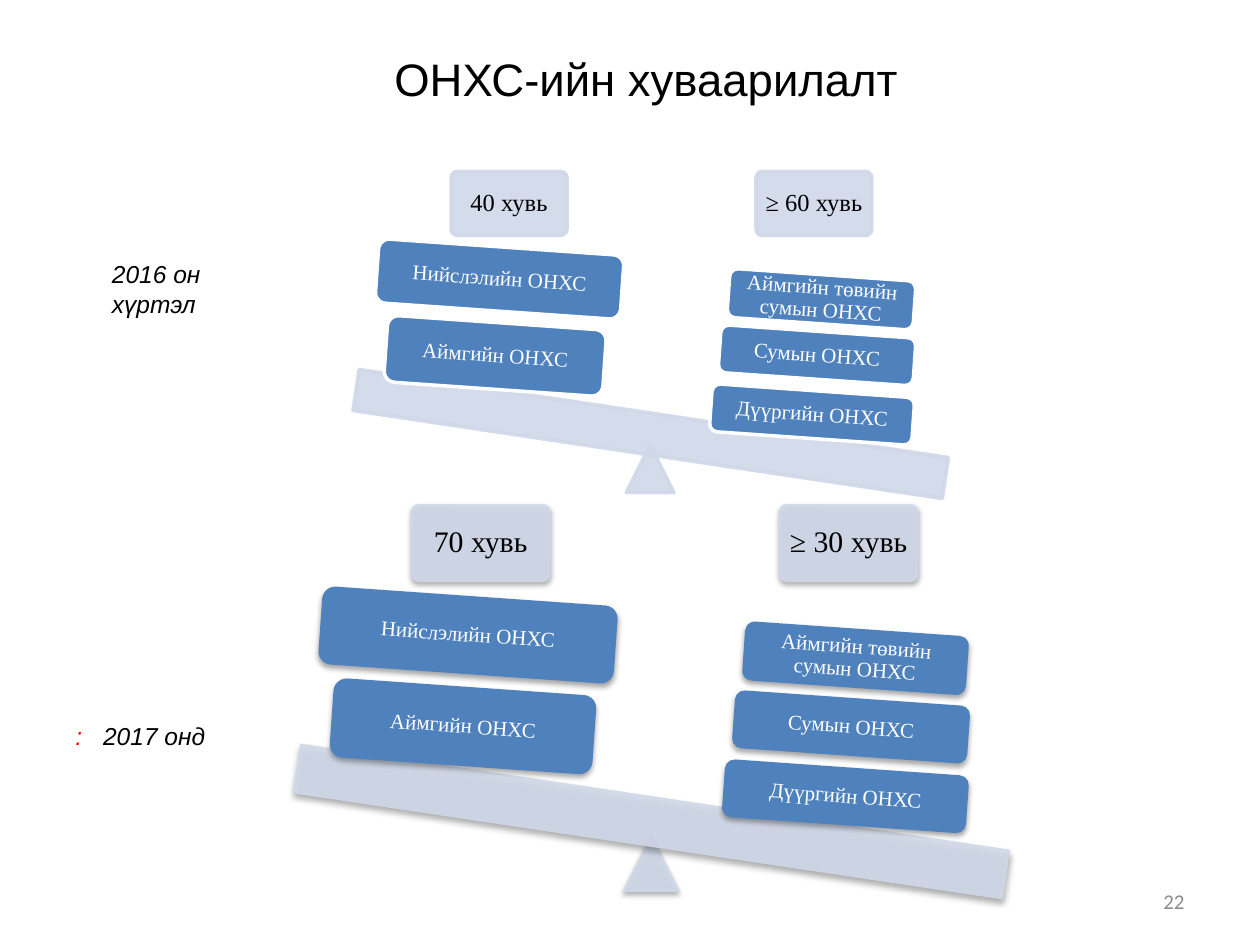
from dataclasses import dataclass

from lxml import etree
from pptx import Presentation
from pptx.dml.color import RGBColor
from pptx.enum.shapes import MSO_SHAPE as Shape
from pptx.enum.text import MSO_ANCHOR as Anchor, PP_ALIGN as Align
from pptx.oxml.ns import qn
from pptx.util import Inches, Pt


@dataclass(frozen=True)
class Theme:
    pale: str = "D0D8E8"
    blue: str = "4F81BD"
    white: str = "FFFFFF"
    black: str = "000000"
    red: str = "FF0000"
    gray: str = "8C8C8C"
    sans: str = "Arial"
    serif: str = "Times New Roman"
    number_font: str = "Calibri"
    title_size: int = 26
    large_card_size: int = 17
    card_size: int = 14
    label_size: int = 14
    small_size: int = 12
    pale_alpha: int = 90


class SlideBuilder:
    def __init__(self, slide, theme):
        self.slide = slide
        self.theme = theme

    def set_text(self, shape, text, size, font, color, align, anchor, italic=False):
        frame = shape.text_frame
        frame.text = text
        frame.word_wrap = True
        frame.vertical_anchor = anchor
        paragraph = frame.paragraphs[0]
        paragraph.alignment = align
        style = paragraph.runs[0].font
        style.size, style.name, style.italic = Pt(size), font, italic
        style.color.rgb = RGBColor.from_string(color)
        return paragraph

    def text_box(self, text, box, size, font, color, align=Align.LEFT,
                 anchor=Anchor.TOP, italic=False):
        shape = self.slide.shapes.add_textbox(*map(Inches, box))
        self.set_text(shape, text, size, font, color, align, anchor, italic)

    def label(self, text, box, color):
        self.text_box(text, box, self.theme.label_size, self.theme.sans, color,
                      italic=True)

    def fade(self, properties):
        color = properties.find(qn("a:solidFill"))[0]
        etree.SubElement(color, qn("a:alpha"), val=str(self.theme.pale_alpha * 1000))

    def cast_shadow(self, shape):
        effects = shape._element.spPr.find(qn("a:effectLst"))
        shadow = etree.SubElement(effects, qn("a:outerShdw"), blurRad="40000",
                                  dist="23000", dir="5400000", rotWithShape="0")
        color = etree.SubElement(shadow, qn("a:srgbClr"), val=self.theme.black)
        etree.SubElement(color, qn("a:alpha"), val="35000")

    def block(self, group, kind, box, fill, outline=None, rotation=0):
        """Outlined block, or a block with a drop shadow when there is no outline."""
        shape = group.shapes.add_shape(kind, *map(Inches, box))
        shape.rotation = rotation
        shape.shadow.inherit = False
        shape.fill.solid()
        shape.fill.fore_color.rgb = RGBColor.from_string(fill)
        properties = shape._element.spPr
        pale = fill == self.theme.pale
        if pale:
            self.fade(properties)
        if outline:
            shape.line.width = Pt(2)
            shape.line.color.rgb = RGBColor.from_string(outline)
            if pale:
                self.fade(properties.find(qn("a:ln")))
        else:
            shape.line.fill.background()
            self.cast_shadow(shape)
        return shape

    def caption(self, shape, text, size, color, inset):
        frame = shape.text_frame
        frame.margin_left = frame.margin_right = Inches(inset)
        frame.margin_top = frame.margin_bottom = Inches(inset)
        paragraph = self.set_text(shape, text, size, self.theme.serif, color,
                                  Align.CENTER, Anchor.MIDDLE)
        paragraph.line_spacing = 0.9

    def balance(self, cards, card_size, pivot, beam, tiles, outlined):
        theme = self.theme
        group = self.slide.shapes.add_group_shape()
        pale_line = theme.pale if outlined else None
        for text, box in cards:
            card = self.block(group, Shape.ROUNDED_RECTANGLE, box, theme.pale, pale_line)
            card.adjustments[0] = 0.1
            self.caption(card, text, card_size, theme.black, 0.05)
        self.block(group, Shape.ISOSCELES_TRIANGLE, pivot, theme.pale, pale_line)
        self.block(group, Shape.RECTANGLE, beam, theme.pale, pale_line, 8.5)
        for text, box in zip(TILE_NAMES, tiles):
            tile = self.block(group, Shape.ROUNDED_RECTANGLE, box, theme.blue,
                              theme.white if outlined else None, 4)
            self.caption(tile, text, theme.small_size, theme.white, 0.07)


# Tiles from the bottom up: right pan, then left pan
TILE_NAMES = ["Дүүргийн ОНХС", "Сумын ОНХС", "Аймгийн төвийн сумын ОНХС",
              "Аймгийн ОНХС", "Нийслэлийн ОНХС"]


def main():
    presentation = Presentation()
    presentation.slide_width, presentation.slide_height = Inches(10), Inches(7.5)
    theme = Theme()
    builder = SlideBuilder(
        presentation.slides.add_slide(presentation.slide_layouts[6]), theme)

    # Title
    builder.text_box("ОНХС-ийн хуваарилалт", (0.42, 0.25, 9.42, 0.75),
                     theme.title_size, theme.sans, theme.black, Align.CENTER,
                     Anchor.MIDDLE)

    # Balance until 2016
    builder.balance(
        cards=[("40 хувь", (3.58, 1.36, 0.92, 0.51)),
               ("≥ 60 хувь", (6, 1.36, 0.92, 0.51))],
        card_size=theme.card_size,
        pivot=(4.97, 3.53, 0.38, 0.38),
        beam=(2.8, 3.28, 4.73, 0.33),
        tiles=[(5.64, 3.1, 1.61, 0.38), (5.71, 2.63, 1.55, 0.38),
               (5.78, 2.18, 1.48, 0.39), (3.06, 2.56, 1.74, 0.53),
               (2.99, 1.96, 1.95, 0.51)],
        outlined=True)

    # Page number
    builder.text_box("22", (7.17, 6.95, 2.33, 0.4), theme.small_size,
                     theme.number_font, theme.gray, Align.RIGHT, Anchor.MIDDLE)

    # Balance in 2017
    builder.balance(
        cards=[("70 хувь", (3.26, 4, 1.11, 0.62)),
               ("≥ 30 хувь", (6.18, 4, 1.11, 0.62))],
        card_size=theme.large_card_size,
        pivot=(4.94, 6.62, 0.46, 0.46),
        beam=(2.32, 6.32, 5.7, 0.4),
        tiles=[(5.74, 6.09, 1.94, 0.46), (5.82, 5.54, 1.87, 0.46),
               (5.9, 4.99, 1.78, 0.47), (2.63, 5.45, 2.09, 0.63),
               (2.54, 4.73, 2.35, 0.62)],
        outlined=False)

    # Year labels
    builder.label(":", (0.5, 5.67, 1.92, 0.34), theme.red)
    builder.label("2016 он хүртэл", (0.79, 2.01, 1.33, 0.57), theme.black)
    builder.label("2017 онд", (0.72, 5.67, 1.33, 0.34), theme.black)

    presentation.save("out.pptx")


if __name__ == "__main__":
    main()
